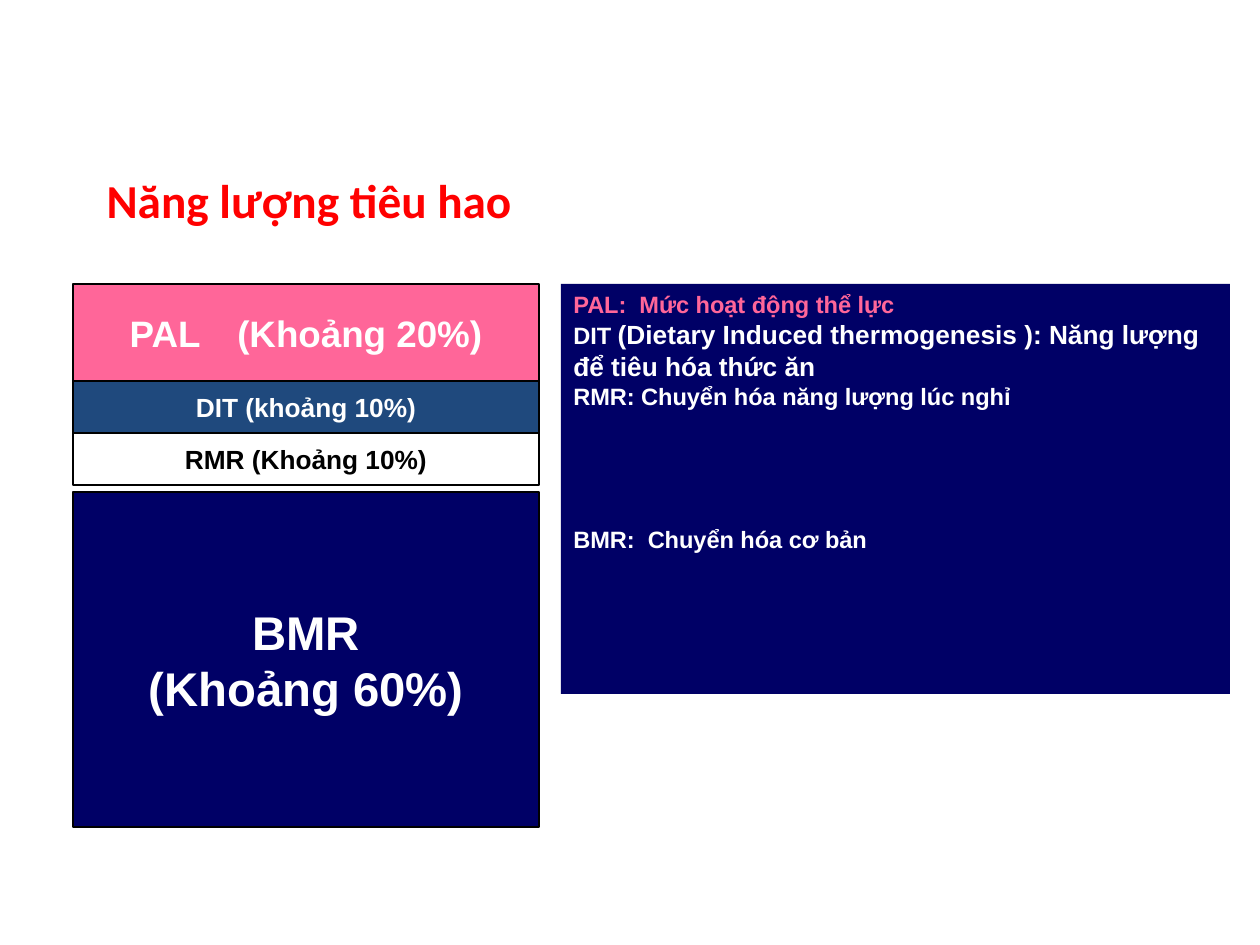
from pptx import Presentation
from pptx.dml.color import RGBColor
from pptx.enum.shapes import MSO_SHAPE
from pptx.enum.text import MSO_ANCHOR, PP_ALIGN
from pptx.util import Pt

EMU_PER_PX = 914400 / 126
NAVY, BLUE, PINK = "000066", "1F497D", "FF6699"
WHITE, BLACK, RED = "FFFFFF", "000000", "FF0000"

BAR_LEFT, BAR_WIDTH = 73, 466
STACK_TOP = 284
# label lines, height, gap above, fill, text colour, text size
ENERGY_PARTS = [
    (["PAL　(Khoảng 20%)"], 97, 0, PINK, WHITE, 21),
    (["DIT (khoảng 10%)"], 52, 0, BLUE, WHITE, 15),
    (["RMR (Khoảng 10%)"], 52, 0, WHITE, BLACK, 15),
    (["BMR", "(Khoảng 60%)"], 335, 7, NAVY, WHITE, 27),
]


def px(length):
    return round(length * EMU_PER_PX)


def color(hex_code):
    return RGBColor.from_string(hex_code)


def place(shape, left, top, width, height):
    shape.left, shape.top = px(left), px(top)
    shape.width, shape.height = px(width), px(height)


def add_run(paragraph, text, size, fill=WHITE, font="Arial", bold=True):
    run = paragraph.add_run()
    run.text = text
    run.font.size = Pt(size)
    run.font.name = font
    run.font.bold = bold
    run.font.color.rgb = color(fill)


def write(frame, paragraphs, align=PP_ALIGN.LEFT, anchor=MSO_ANCHOR.MIDDLE, wrap=True):
    """Fill a text frame; each paragraph is a list of run keyword sets."""
    frame.word_wrap = wrap
    frame.vertical_anchor = anchor
    for index, runs in enumerate(paragraphs):
        paragraph = frame.paragraphs[0] if index == 0 else frame.add_paragraph()
        paragraph.alignment = align
        for run in runs:
            add_run(paragraph, **run)


def add_box(slide, left, top, width, height, fill, outline=None):
    box = slide.shapes.add_shape(
        MSO_SHAPE.RECTANGLE, px(left), px(top), px(width), px(height))
    box.shadow.inherit = False
    box.fill.solid()
    box.fill.fore_color.rgb = color(fill)
    if outline:
        box.line.color.rgb = color(outline)
        box.line.width = Pt(0.75)
    else:
        box.line.fill.background()
    return box


def add_title(slide):
    title = slide.shapes.title
    place(title, 94, 141, 1071, 118)
    write(title.text_frame,
          [[dict(text="Năng lượng tiêu hao", size=27, fill=RED, font="Calibri")]])


def add_energy_stack(slide):
    top = STACK_TOP
    for lines, height, gap, fill, text_fill, size in ENERGY_PARTS:
        top += gap
        box = add_box(slide, BAR_LEFT, top, BAR_WIDTH, height, fill, BLACK)
        write(box.text_frame,
              [[dict(text=line, size=size, fill=text_fill)] for line in lines],
              align=PP_ALIGN.CENTER, wrap=False)
        top += height


def add_glossary(slide):
    panel = add_box(slide, 561, STACK_TOP, 669, 410, NAVY)
    write(panel.text_frame, [
        [dict(text="PAL:  Mức hoạt động thể lực", size=13.5, fill=PINK)],
        [dict(text="DIT ", size=13.5),
         dict(text="(Dietary Induced thermogenesis ): Năng lượng để tiêu hóa thức ăn",
              size=15)],
        [dict(text="RMR: Chuyển hóa năng lượng lúc nghỉ", size=13.5)],
        [dict(text="BMR:  Chuyển hóa cơ bản", size=13.5)],
    ], anchor=MSO_ANCHOR.TOP)
    panel.text_frame.paragraphs[-1].space_before = Pt(66)


def main():
    presentation = Presentation()
    presentation.slide_width, presentation.slide_height = px(1260), px(945)
    slide = presentation.slides.add_slide(presentation.slide_layouts[5])
    add_title(slide)
    add_energy_stack(slide)
    add_glossary(slide)
    presentation.save("out.pptx")


if __name__ == "__main__":
    main()
